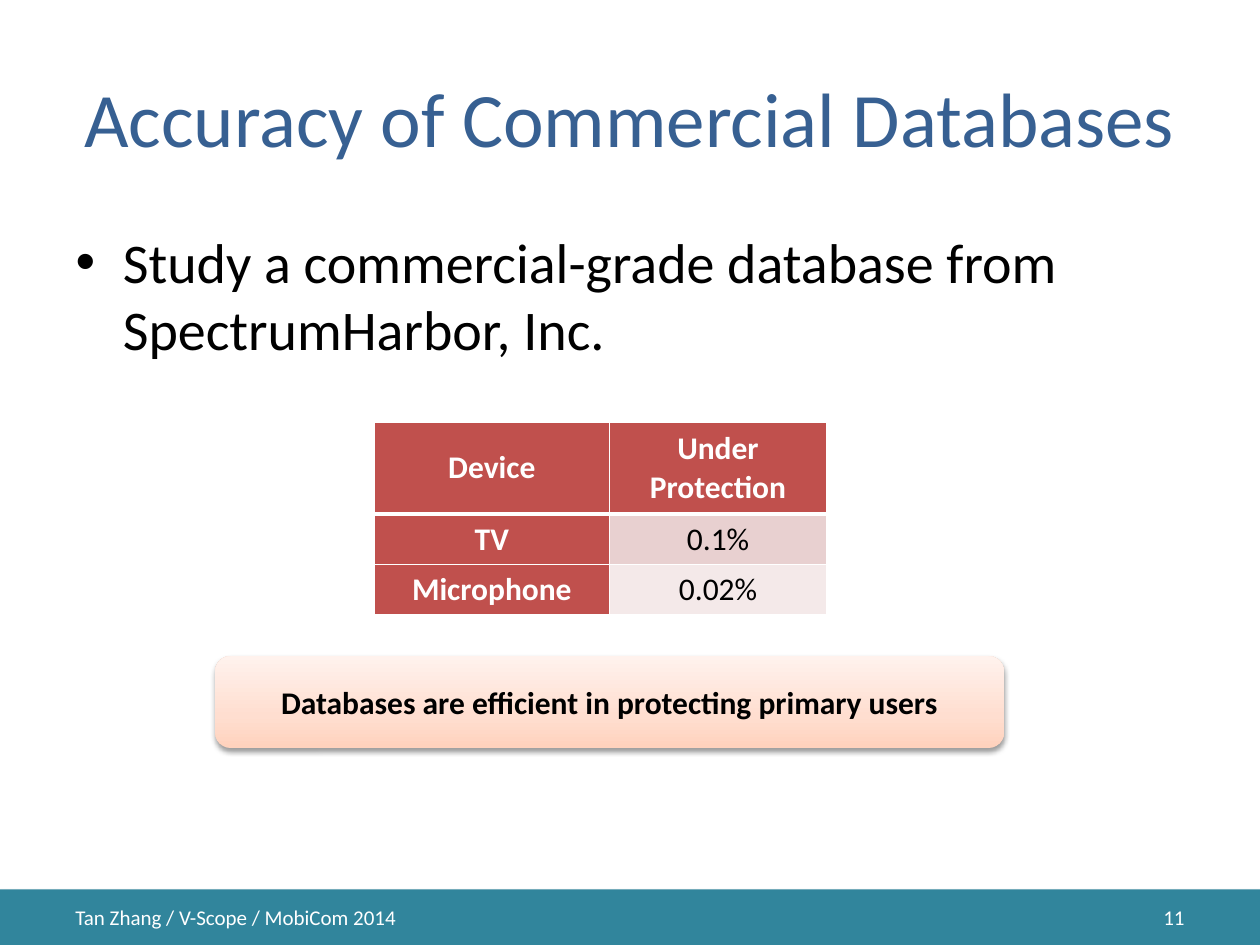
from copy import deepcopy

from lxml.etree import SubElement
from pptx import Presentation
from pptx.dml.color import RGBColor
from pptx.enum.shapes import MSO_SHAPE
from pptx.enum.text import MSO_ANCHOR, PP_ALIGN
from pptx.oxml.ns import qn
from pptx.util import Cm, Pt

FONT = "Calibri"
WHITE = RGBColor(0xFF, 0xFF, 0xFF)
BLACK = RGBColor(0x00, 0x00, 0x00)
BLUE = RGBColor(0x37, 0x60, 0x92)
TEAL = RGBColor(0x31, 0x85, 0x9C)
RED = RGBColor(0xC0, 0x50, 0x4D)
BANDS = (RGBColor(0xE8, 0xD0, 0xD0), RGBColor(0xF4, 0xE9, 0xE9))
PEACH = (
    (0, RGBColor(0xFF, 0xD2, 0xBD)),
    (0.35, RGBColor(0xFF, 0xDE, 0xD0)),
    (1, RGBColor(0xFF, 0xF2, 0xED)),
)
ROWS = (("Device", "Under Protection"), ("TV", "0.1%"), ("Microphone", "0.02%"))


def write(tf, text, size, color, bold=False, align=PP_ALIGN.LEFT, anchor=MSO_ANCHOR.MIDDLE):
    """Fill a text frame with one formatted paragraph."""
    tf.word_wrap = True
    tf.vertical_anchor = anchor
    p = tf.paragraphs[0]
    p.alignment = align
    p.space_before = Pt(0)
    r = p.add_run()
    r.text = text
    for name, value in {"name": FONT, "size": Pt(size), "bold": bold}.items():
        setattr(r.font, name, value)
    r.font.color.rgb = color


def place(sp, box):
    """Move a shape to a box of left, top, width and height in centimetres."""
    for name, value in zip(("left", "top", "width", "height"), box):
        setattr(sp, name, Cm(value))


def add_shadow(sp, dist, alpha):
    """Give a shape a soft black shadow that falls downwards."""
    sp.shadow.inherit = False
    effects = sp._element.spPr.find(qn("a:effectLst"))
    shadow = SubElement(effects, qn("a:outerShdw"), blurRad=str(Pt(3.1)),
                        dist=str(Pt(dist)), dir="5400000", rotWithShape="0")
    color = SubElement(shadow, qn("a:srgbClr"), val=str(BLACK))
    SubElement(color, qn("a:alpha"), val=str(alpha * 1000))


def add_footer(s, box):
    """Draw the footer band with the talk on the left and the page on the right."""
    left, top, width, height = box
    sp = s.shapes.add_shape(MSO_SHAPE.RECTANGLE, *map(Cm, box))
    sp.fill.solid()
    sp.fill.fore_color.rgb = TEAL
    sp.line.fill.background()
    add_shadow(sp, 1.8, 35)
    margin = 1.27
    talk_w, page_w = 7.77, 5.92
    for x, w, text, align in (
        (left + margin, talk_w, "Tan Zhang / V-Scope / MobiCom 2014", PP_ALIGN.LEFT),
        (left + width - margin - page_w, page_w, "11", PP_ALIGN.RIGHT),
    ):
        tb = s.shapes.add_textbox(Cm(x), Cm(top + 0.05), Cm(w), Cm(height - 0.15))
        write(tb.text_frame, text, 12, WHITE, align=align)


def add_title(s, box):
    """Fill the title placeholder."""
    sp = s.shapes.title
    place(sp, box)
    write(sp.text_frame, "Accuracy of Commercial Databases", 44, BLUE, align=PP_ALIGN.CENTER)


def add_body(s, box):
    """Fill the body placeholder with its bullet."""
    sp = s.placeholders[1]
    place(sp, box)
    write(sp.text_frame, "Study a commercial-grade database from SpectrumHarbor, Inc.",
          32, BLACK, anchor=MSO_ANCHOR.TOP)


def set_borders(cell, widths):
    """Draw white cell borders from a dict of side and width in points."""
    tc_pr = cell._tc.get_or_add_tcPr()
    for side, width in widths.items():
        ln = SubElement(tc_pr, qn(f"a:ln{side}"), w=str(Pt(width)))
        fill = SubElement(ln, qn("a:solidFill"))
        SubElement(fill, qn("a:srgbClr"), val=str(WHITE))


def add_accuracy_table(s, box):
    """Build the table of protection errors by device."""
    table = s.shapes.add_table(len(ROWS), len(ROWS[0]), *map(Cm, box)).table
    table.horz_banding = False
    table.first_col = True
    for col, width in zip(table.columns, (4.75, box[2] - 4.75)):
        col.width = Cm(width)
    head_h = 1.85
    for i, row in enumerate(table.rows):
        row.height = Cm((box[3] - head_h) / (len(ROWS) - 1) if i else head_h)
        for j, cell in enumerate(row.cells):
            is_value = i > 0 and j > 0
            set_borders(cell, {"L": 1, "R": 1, "T": 3 if i == 1 else 1, "B": 1 if i else 3})
            cell.fill.solid()
            cell.fill.fore_color.rgb = BANDS[i - 1] if is_value else RED
            for side, value in {"left": 0.13, "right": 0.13, "top": 0.06, "bottom": 0.06}.items():
                setattr(cell, f"margin_{side}", Cm(value))
            cell.vertical_anchor = MSO_ANCHOR.MIDDLE
            write(cell.text_frame, ROWS[i][j], 18, BLACK if is_value else WHITE,
                  bold=not is_value, align=PP_ALIGN.CENTER)


def add_conclusion(s, box):
    """Draw the rounded box that states the conclusion."""
    sp = s.shapes.add_shape(MSO_SHAPE.ROUNDED_RECTANGLE, *map(Cm, box))
    sp.fill.gradient()
    sp.fill.gradient_angle = 90
    first = sp._element.spPr.find(f".//{qn('a:gs')}")
    first.addnext(deepcopy(first))
    for stop, (position, color) in zip(sp.fill.gradient_stops, PEACH):
        stop.position = position
        stop.color.rgb = color
    sp.line.fill.background()
    add_shadow(sp, 1.6, 38)
    write(sp.text_frame, "Databases are efficient in protecting primary users", 18, BLACK,
          bold=True, align=PP_ALIGN.CENTER)


def main():
    """Build the slide and save it."""
    prs = Presentation()
    prs.slide_width, prs.slide_height = Cm(25.4), Cm(19.05)
    s = prs.slides.add_slide(prs.slide_layouts[1])
    add_footer(s, (0, 17.93, 25.4, 1.17))
    add_title(s, (1.27, 0.76, 22.86, 3.18))
    add_accuracy_table(s, (7.54, 8.51, 9.12, 3.89))
    add_conclusion(s, (4.34, 13.23, 15.9, 1.85))
    add_body(s, (1.27, 4.45, 22.86, 12.57))
    prs.save("out.pptx")


if __name__ == "__main__":
    main()
